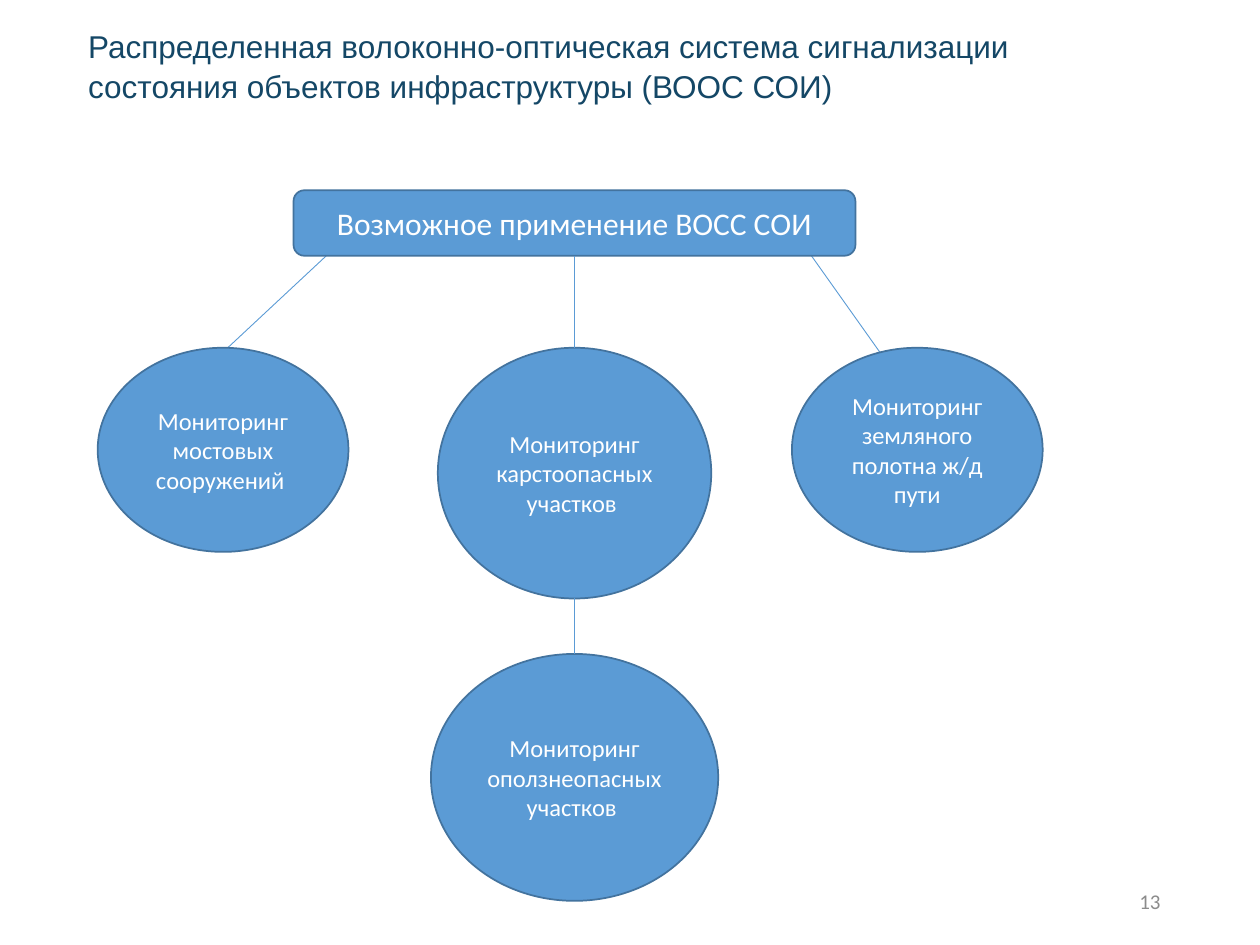
"""Build the slide on possible uses of the fibre-optic signalling system."""
from lxml.etree import SubElement
from pptx import Presentation
from pptx.dml.color import RGBColor
from pptx.enum.shapes import MSO_CONNECTOR, MSO_SHAPE
from pptx.enum.text import MSO_ANCHOR, MSO_AUTO_SIZE, PP_ALIGN
from pptx.oxml.ns import qn
from pptx.util import Inches, Pt


def write(shape, text, size, font, color, align, anchor):
    """Put one formatted run into a shape."""
    frame = shape.text_frame
    frame.word_wrap = True
    frame.auto_size = MSO_AUTO_SIZE.NONE
    frame.vertical_anchor = anchor
    para = frame.paragraphs[0]
    para.alignment = align
    span = para.add_run()
    span.text = text
    span.font.size = Pt(size)
    span.font.name = font
    span.font.color.rgb = RGBColor.from_string(color)
    return para


def style_line(connector, arrow=False):
    """Give a connector a thin blue line, without shadow."""
    connector.line.color.rgb = RGBColor.from_string("5B9BD5")
    connector.line.width = Pt(0.5)
    if arrow:
        SubElement(connector.line._get_or_add_ln(), qn("a:tailEnd"), type="arrow")
    SubElement(connector._element.spPr, qn("a:effectLst"))


deck = Presentation()
deck.slide_width, deck.slide_height = Inches(10), Inches(7.5)
column, row = deck.slide_width / 100, deck.slide_height / 75
page = deck.slides.add_slide(deck.slide_layouts[5])

title = page.shapes.title
title.left, title.top = int(6 * column), int(1.5 * row)
title.width, title.height = int(76.7 * column), int(10.1 * row)
heading = write(
    title,
    "Распределенная волоконно-оптическая система сигнализации "
    "состояния объектов инфраструктуры (ВООС СОИ)",
    18, "Arial", "144766", PP_ALIGN.LEFT, MSO_ANCHOR.TOP,
)
heading.line_spacing = 1.05

number = page.shapes.add_textbox(
    int(70.6 * column), int(69.5 * row), int(22.5 * column), int(4 * row))
write(number, "13", 12, "Calibri", "8C8C8C", PP_ALIGN.RIGHT, MSO_ANCHOR.MIDDLE)

for start, end, bottom in [(25.9, 15.4, 30.1), (64.4, 70.5, 28.9)]:
    branch = page.shapes.add_connector(
        MSO_CONNECTOR.STRAIGHT, int(start * column), int(20.3 * row),
        int(end * column), int(bottom * row))
    style_line(branch, arrow=True)

axis, level = 45.6, 27.6
nodes = [
    (MSO_SHAPE.ROUNDED_RECTANGLE, axis, 15.1, 44.6, 5.2, 18, "Возможное применение ВОСС СОИ"),
    (MSO_SHAPE.OVAL, 17.7, level, 19.9, 16.2, 14, "Мониторинг мостовых сооружений "),
    (MSO_SHAPE.OVAL, axis, 51.9, 22.8, 19.6, 14, "Мониторинг оползнеопасных участков "),
    (MSO_SHAPE.OVAL, 72.8, level, 19.9, 16.2, 14, "Мониторинг земляного полотна ж/д пути"),
    (MSO_SHAPE.OVAL, axis, level, 21.7, 19.9, 14, "Мониторинг карстоопасных участков "),
]
boxes = []
for kind, center, top, width, height, size, text in nodes:
    box = page.shapes.add_shape(
        kind, int((center - width / 2) * column), int(top * row),
        int(width * column), int(height * row))
    box.shadow.inherit = False
    box.fill.solid()
    box.fill.fore_color.rgb = RGBColor.from_string("5B9BD5")
    box.line.color.rgb = RGBColor.from_string("43739E")
    box.line.width = Pt(1)
    write(box, text, size, "Calibri", "FFFFFF", PP_ALIGN.CENTER, MSO_ANCHOR.MIDDLE)
    boxes.append(box)

header, bridges, landslides, roadbed, karst = boxes
for upper, lower in [(header, karst), (karst, landslides)]:
    middle = int(axis * column)
    link = page.shapes.add_connector(
        MSO_CONNECTOR.STRAIGHT, middle, upper.top + upper.height, middle, lower.top)
    if upper is header:
        link.begin_connect(upper, 2)
    link.end_connect(lower, 0)
    style_line(link)

deck.save("out.pptx")
